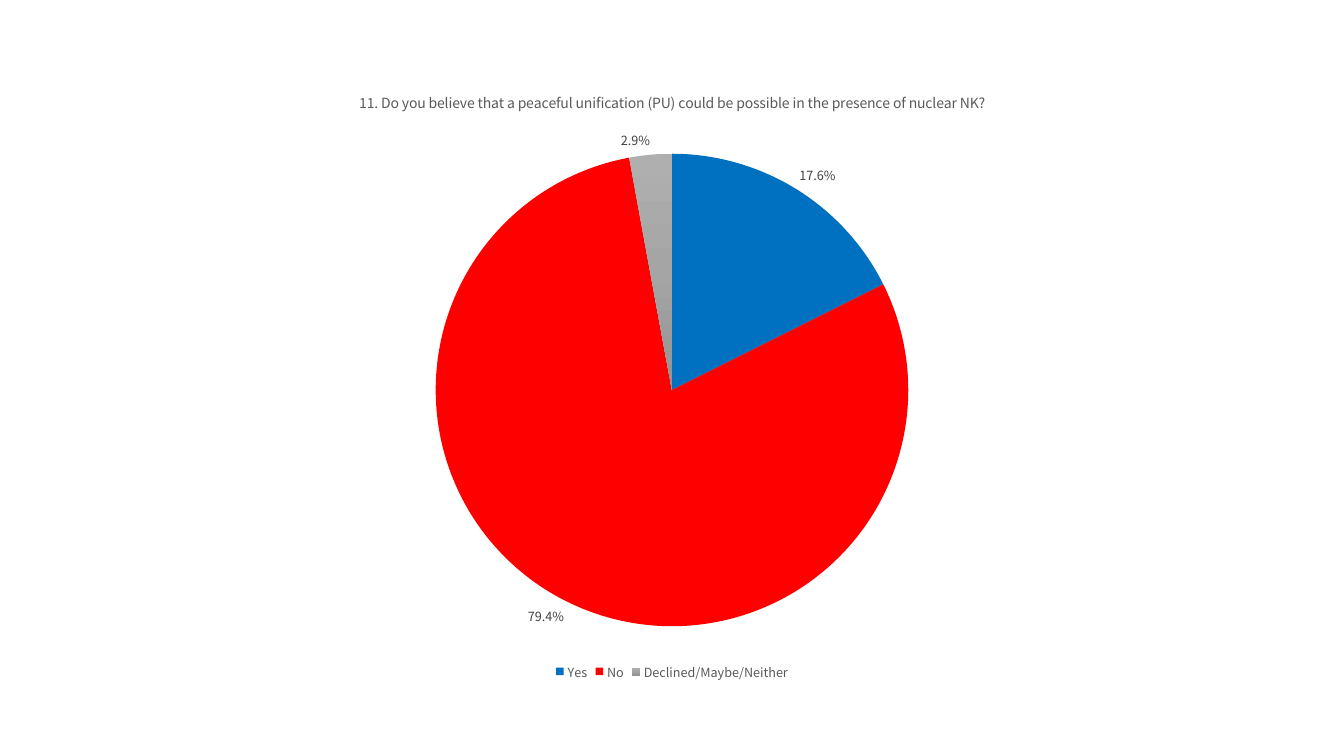
from copy import deepcopy

from pptx import Presentation
from pptx.chart.data import CategoryChartData
from pptx.dml.color import RGBColor
from pptx.enum.chart import XL_CHART_TYPE, XL_LABEL_POSITION, XL_LEGEND_POSITION
from pptx.oxml.ns import qn
from pptx.util import Inches, Pt

FONT = "Noto Sans CJK KR"
COLORS = {
    "yes": "0070C0",
    "no": "FF0000",
    "other_light": "AFAFAF",
    "other_middle": "A5A5A5",
    "other_dark": "939393",
    "text": "595959",
    "label": "404040",
    "base": "000000",
}
# A single em space sets the number apart from the question.
QUESTION = "11. Do you believe that a peaceful unification (PU) could be possible in the presence of nuclear NK?"
ANSWERS = {"Yes": 0.176, "No": 0.794, "Declined/Maybe/Neither": 0.029}


def style_font(font, size, color):
    font.name = FONT
    font.size = Pt(size)
    font.bold = False
    font.color.rgb = RGBColor.from_string(COLORS[color])


deck = Presentation()
deck.slide_width = Inches(13.33)
deck.slide_height = Inches(7.5)
page = deck.slides.add_slide(deck.slide_layouts[6])

# Pie chart
chart_data = CategoryChartData(number_format="0.0%")
chart_data.categories = list(ANSWERS)
chart_data.add_series(QUESTION, list(ANSWERS.values()))
chart = page.shapes.add_chart(
    XL_CHART_TYPE.PIE, Inches(0.7), Inches(0.7), Inches(11.93), Inches(6.09), chart_data
).chart
style_font(chart.font, 10, "base")

# Title and legend
chart.has_title = True
para = chart.chart_title.text_frame.paragraphs[0]
span = para.add_run()
span.text = QUESTION
style_font(span.font, 10, "text")
chart.chart_title.include_in_layout = False

chart.has_legend = True
chart.legend.position = XL_LEGEND_POSITION.BOTTOM
chart.legend.include_in_layout = False
style_font(chart.legend.font, 9, "text")

# Slices
plot = chart.plots[0]
plot.vary_by_categories = True
points = plot.series[0].points
for index, color in enumerate(("yes", "no")):
    fill = points[index].format.fill
    fill.solid()
    fill.fore_color.rgb = RGBColor.from_string(COLORS[color])

fill = points[2].format.fill
fill.gradient()
fill.gradient_angle = 270
stop_list = next(chart.element.iter(qn("a:gsLst")))
stop_list.insert(1, deepcopy(stop_list[0]))
shades = ("other_light", "other_middle", "other_dark")
for index, (stop, shade) in enumerate(zip(fill.gradient_stops, shades)):
    stop.position = index / 2
    stop.color.rgb = RGBColor.from_string(COLORS[shade])

# Value labels
labels = plot.series[0].data_labels
labels.show_value = True
labels.show_percentage = False
labels.number_format = "0.0%"
labels.number_format_is_linked = False
labels.position = XL_LABEL_POSITION.OUTSIDE_END
style_font(labels.font, 9, "label")

deck.save("out.pptx")
